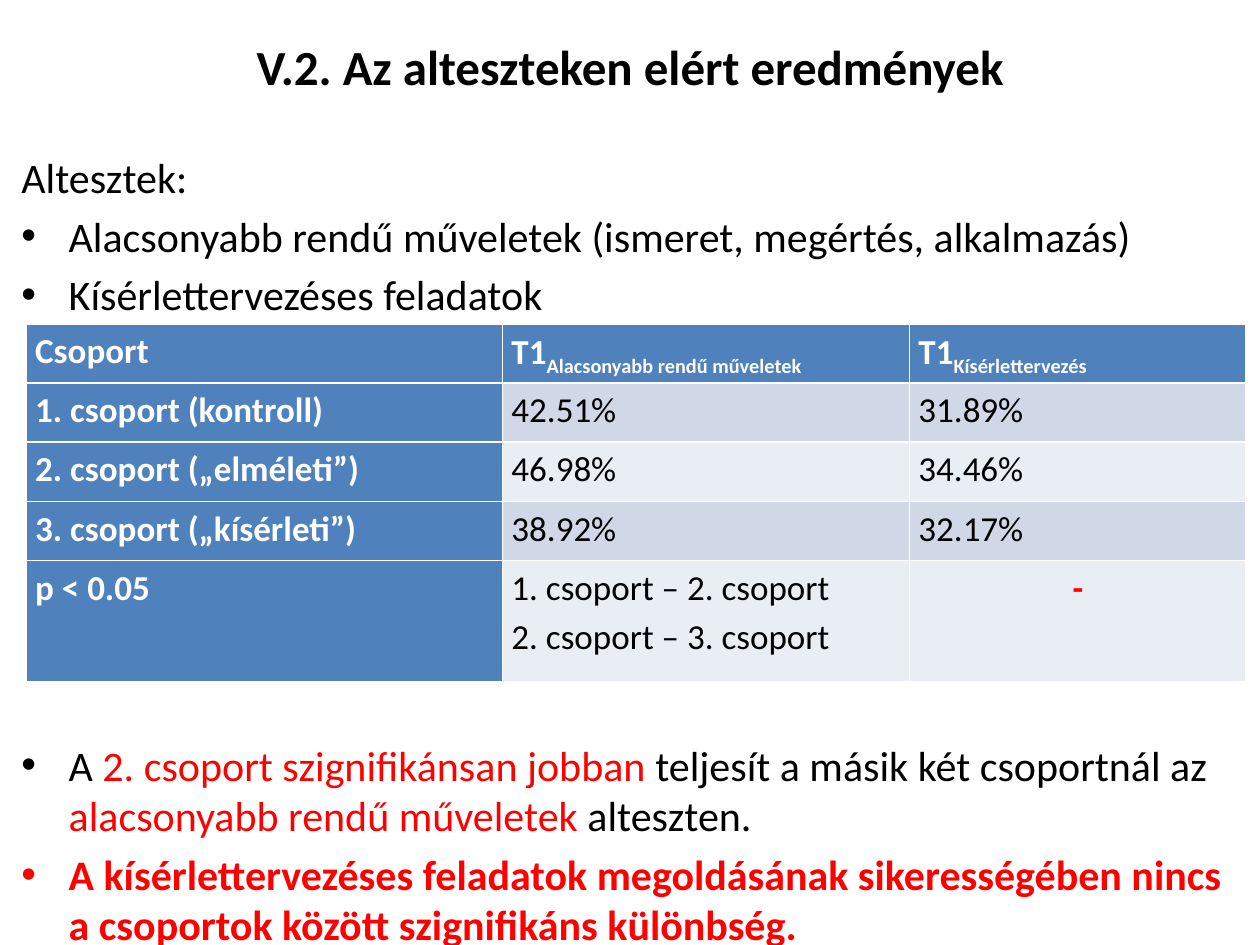
from pptx import Presentation
from pptx.dml.color import RGBColor
from pptx.enum import text as t
from pptx.oxml import ns, xmlchemy
from pptx.util import Inches, Pt

BLACK = RGBColor(0x00, 0x00, 0x00)
WHITE = RGBColor(0xFF, 0xFF, 0xFF)
RED = RGBColor(0xFF, 0x00, 0x00)
BLUE = RGBColor(0x4F, 0x81, 0xBD)
BANDS = [RGBColor(0xD0, 0xD8, 0xE8), RGBColor(0xE9, 0xED, 0xF4)]

HEADING = "V.2. Az alteszteken elért eredmények"
INTRO = "Altesztek:"
SUBTESTS = [
    "Alacsonyabb rendű műveletek (ismeret, megértés, alkalmazás)",
    "Kísérlettervezéses feladatok",
]
FINDING = [
    ("A ", BLACK),
    ("2. csoport szignifikánsan jobban ", RED),
    ("teljesít a másik két csoportnál az ", BLACK),
    ("alacsonyabb rendű műveletek ", RED),
    ("alteszten.", BLACK),
]
CONCLUSION = ("A kísérlettervezéses feladatok megoldásának sikerességében nincs "
              "a csoportok között szignifikáns különbség.")
COLUMNS = [("Csoport", ""), ("T1", "Alacsonyabb rendű műveletek"), ("T1", "Kísérlettervezés")]
RESULTS = [
    ("1. csoport (kontroll)", ["42.51%"], ["31.89%"]),
    ("2. csoport („elméleti”)", ["46.98%"], ["34.46%"]),
    ("3. csoport („kísérleti”)", ["38.92%"], ["32.17%"]),
    ("p < 0.05", ["1. csoport – 2. csoport", "2. csoport – 3. csoport"], ["-"]),
]
COLUMN_WIDTHS = [3.78, 3.23, 2.67]
ROW_HEIGHTS = [0.47] * 4 + [0.96]
TABLE_GAP = Pt(240)


def write(paragraph, text, size=24, color=BLACK, bold=False, baseline=None):
    run = paragraph.add_run()
    run.text = text
    run.font.name = "Calibri"
    run.font.size = Pt(size)
    run.font.bold = bold
    run.font.color.rgb = color
    if baseline:
        run.font._element.set("baseline", str(baseline * 1000))


def place(placeholder, left, top, width, height, anchor):
    placeholder.left, placeholder.top = Inches(left), Inches(top)
    placeholder.width, placeholder.height = Inches(width), Inches(height)
    frame = placeholder.text_frame
    frame.word_wrap = True
    frame.auto_size = t.MSO_AUTO_SIZE.NONE
    frame.vertical_anchor = anchor
    return frame


def cell_paragraph(cell, first=True):
    frame = cell.text_frame
    paragraph = frame.paragraphs[0] if first else frame.add_paragraph()
    paragraph.line_spacing = 1.15
    return paragraph


def fill_body(frame):
    intro = frame.paragraphs[0]
    properties = intro._p.get_or_add_pPr()
    properties.set("marL", "0")
    properties.set("indent", "0")
    properties.append(xmlchemy.OxmlElement("a:buNone"))
    write(intro, INTRO)
    for subtest in SUBTESTS:
        write(frame.add_paragraph(), subtest)
    finding = frame.add_paragraph()
    finding.space_before = TABLE_GAP
    for words, color in FINDING:
        write(finding, words, color=color)
    write(frame.add_paragraph(), CONCLUSION, color=RED, bold=True)


def fill_table(table):
    table.first_col = True
    for column, width in zip(table.columns, COLUMN_WIDTHS):
        column.width = Inches(width)
    for row, height in zip(table.rows, ROW_HEIGHTS):
        row.height = Inches(height)
    for row_index, row in enumerate(table.rows):
        for column_index, cell in enumerate(row.cells):
            is_header = row_index == 0 or column_index == 0
            cell.margin_left = cell.margin_right = Inches(0.07)
            cell.margin_top = cell.margin_bottom = 0
            cell.fill.solid()
            cell.fill.fore_color.rgb = BLUE if is_header else BANDS[(row_index - 1) % 2]
    for cell, (label, subscript) in zip(table.rows[0].cells, COLUMNS):
        paragraph = cell_paragraph(cell)
        write(paragraph, label, size=20, color=WHITE, bold=True)
        if subscript:
            write(paragraph, subscript, size=20, color=WHITE, bold=True, baseline=-25)
    for row_index, (group, *scores) in enumerate(RESULTS, start=1):
        write(cell_paragraph(table.cell(row_index, 0)), group, size=20, color=WHITE, bold=True)
        for column_index, lines in enumerate(scores, start=1):
            for line_index, line in enumerate(lines):
                paragraph = cell_paragraph(table.cell(row_index, column_index), line_index == 0)
                no_difference = line == "-"
                if no_difference:
                    paragraph.alignment = t.PP_ALIGN.CENTER
                write(paragraph, line, size=20, color=RED if no_difference else BLACK,
                      bold=no_difference)


def main():
    deck = Presentation()
    deck.slide_width, deck.slide_height = Inches(10), Inches(7.5)
    slide = deck.slides.add_slide(deck.slide_layouts[1])
    title = place(slide.shapes.title, 0.5, 0.04, 9, 0.96, t.MSO_ANCHOR.MIDDLE)
    title.paragraphs[0].alignment = t.PP_ALIGN.CENTER
    write(title.paragraphs[0], HEADING, size=28, bold=True)
    fill_body(place(slide.placeholders[1], 0.07, 1.15, 9.89, 6.31, t.MSO_ANCHOR.TOP))
    results = slide.shapes.add_table(
        len(ROW_HEIGHTS), len(COLUMN_WIDTHS), Inches(0.21), Inches(2.57),
        Inches(sum(COLUMN_WIDTHS)), Inches(sum(ROW_HEIGHTS)))
    fill_table(results.table)
    deck.save("out.pptx")


if __name__ == "__main__":
    main()
